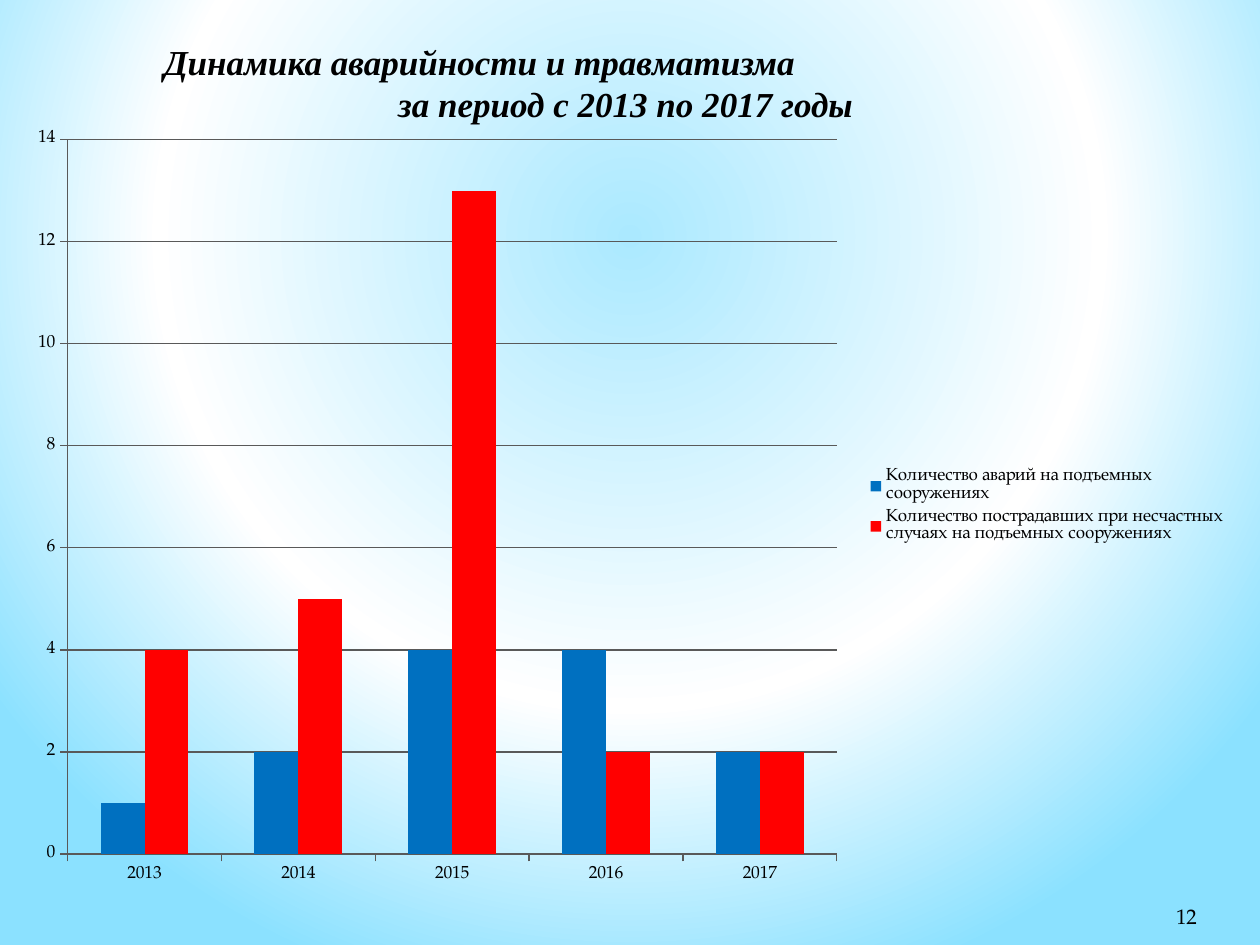
from dataclasses import dataclass

from pptx import Presentation
from pptx.chart.data import CategoryChartData
from pptx.dml.color import RGBColor
from pptx.enum.chart import XL_CHART_TYPE as ChartType
from pptx.enum.chart import XL_LEGEND_POSITION as LegendPosition
from pptx.enum.chart import XL_TICK_MARK as TickMark
from pptx.enum.text import MSO_ANCHOR as Anchor
from pptx.enum.text import MSO_AUTO_SIZE as AutoSize
from pptx.enum.text import PP_ALIGN as Align
from pptx.oxml import parse_xml
from pptx.oxml.ns import nsdecls
from pptx.util import Inches, Pt

WIDTH, HEIGHT = 10, 7.5
BODY_FONT, TITLE_FONT = "TeX Gyre Pagella", "Times New Roman"
BLACK, AXIS_GREY = "000000", "595959"
TITLE_ONLY = 5
BACKGROUND_STOPS = ((0, "ABE9FF"), (60, "FFFFFF"), (100, "8BE1FF"))
YEARS = [str(year) for year in range(2013, 2018)]


@dataclass(frozen=True)
class Frame:
    """A rectangle in shares of whatever contains it."""
    left: float
    top: float
    width: float
    height: float

    def on_page(self) -> tuple:
        return (Inches(self.left * WIDTH), Inches(self.top * HEIGHT),
                Inches(self.width * WIDTH), Inches(self.height * HEIGHT))


@dataclass(frozen=True)
class Series:
    name: str
    values: tuple
    color: str


@dataclass(frozen=True)
class TitleLine:
    text: str
    indent: float  # share of the slide's width


SERIES = (
    Series("Количество аварий на подъемных сооружениях", (1, 2, 4, 4, 2), "0070C0"),
    Series("Количество пострадавших при несчастных случаях на подъемных сооружениях",
           (4, 5, 13, 2, 2), "FF0000"),
)
TITLE_LINES = (
    TitleLine("Динамика аварийности и травматизма", 0.014),
    TitleLine("за период с 2013 по 2017 годы", 0.2),
)
CHART_FRAME = Frame(0.012, 0.123, 0.969, 0.829)
PLOT_FRAME = Frame(0.043, 0.03, 0.63, 0.912)
LEGEND_FRAME = Frame(0.695, 0.443, 0.3, 0.11)
TITLE_FRAME = Frame(0.106, 0.036, 0.78, 0.103)
NUMBER_FRAME = Frame(0.867, 0.936, 0.083, 0.053)


def rgb(color: str) -> RGBColor:
    return RGBColor.from_string(color)


def format_font(font, *, name: str, size: float, color: str = BLACK,
                bold: bool = False, italic: bool = False) -> None:
    font.name, font.size = name, Pt(size)
    font.bold, font.italic = bold, italic
    font.color.rgb = rgb(color)


def write(para, text: str, *, align, indent: float = 0, **font_format) -> None:
    para.alignment = align
    para.line_spacing = 1.0
    para.space_before = para.space_after = Pt(0)
    if indent:
        properties = para._p.get_or_add_pPr()
        properties.set("marL", str(Inches(indent * WIDTH)))
        properties.set("indent", "0")
    span = para.add_run()
    span.text = text
    format_font(span.font, **font_format)


def paint_background(page) -> None:
    stops = "".join(f'<a:gs pos="{share * 1000}"><a:srgbClr val="{color}"/></a:gs>'
                    for share, color in BACKGROUND_STOPS)
    background = parse_xml(
        f'<p:bg {nsdecls("p", "a")}><p:bgPr><a:gradFill rotWithShape="1">'
        f'<a:gsLst>{stops}</a:gsLst><a:path path="circle">'
        '<a:fillToRect l="20000" t="10000" r="20000" b="60000"/></a:path>'
        '</a:gradFill><a:effectLst/></p:bgPr></p:bg>')
    page._element.cSld.insert(0, background)


def chart_layout(frame: Frame, *, inner: bool = False):
    target = '<c:layoutTarget val="inner"/>' if inner else ""
    return parse_xml(
        f'<c:layout {nsdecls("c")}><c:manualLayout>{target}'
        '<c:xMode val="edge"/><c:yMode val="edge"/>'
        f'<c:x val="{frame.left}"/><c:y val="{frame.top}"/>'
        f'<c:w val="{frame.width}"/><c:h val="{frame.height}"/>'
        '</c:manualLayout></c:layout>')


def format_line(line) -> None:
    line.color.rgb = rgb(AXIS_GREY)
    line.width = Pt(0.75)


def add_accident_chart(page) -> None:
    data = CategoryChartData(number_format="General")
    data.categories = YEARS
    for series in SERIES:
        data.add_series(series.name, series.values)
    chart = page.shapes.add_chart(
        ChartType.COLUMN_CLUSTERED, *CHART_FRAME.on_page(), data).chart
    chart.has_title = False
    format_font(chart.font, name=BODY_FONT, size=10)

    plot = chart.plots[0]
    plot.gap_width, plot.overlap = 150, 0
    plot.vary_by_categories = False
    for column, series in zip(plot.series, SERIES):
        column.format.fill.solid()
        column.format.fill.fore_color.rgb = rgb(series.color)

    for axis in (chart.category_axis, chart.value_axis):
        axis.major_tick_mark = TickMark.OUTSIDE
        axis.minor_tick_mark = TickMark.NONE
        format_line(axis.format.line)
    scale = chart.value_axis
    scale.minimum_scale, scale.maximum_scale, scale.major_unit = 0, 14, 2
    scale.has_major_gridlines = True
    format_line(scale.major_gridlines.format.line)

    chart.has_legend = True
    legend = chart.legend
    legend.position = LegendPosition.RIGHT
    legend.include_in_layout = False
    place_in_chart(chart._chartSpace.chart.plotArea, 0,
                   chart_layout(PLOT_FRAME, inner=True))
    place_in_chart(legend._element, 1, chart_layout(LEGEND_FRAME))


def place_in_chart(part, index: int, layout) -> None:
    for old in part.xpath("c:layout"):
        part.remove(old)
    part.insert(index, layout)


def fill_title(page) -> None:
    title = page.shapes.title
    title.left, title.top, title.width, title.height = TITLE_FRAME.on_page()
    frame = title.text_frame
    frame.word_wrap = True
    frame.auto_size = AutoSize.SHAPE_TO_FIT_TEXT
    frame.vertical_anchor = Anchor.TOP
    for index, line in enumerate(TITLE_LINES):
        para = frame.add_paragraph() if index else frame.paragraphs[0]
        write(para, line.text, align=Align.LEFT, indent=line.indent,
              name=TITLE_FONT, size=20, bold=True, italic=True)


def add_page_number(page, number: int) -> None:
    frame = page.shapes.add_textbox(*NUMBER_FRAME.on_page()).text_frame
    frame.word_wrap = True
    frame.vertical_anchor = Anchor.BOTTOM
    frame.margin_left = frame.margin_right = 0
    write(frame.paragraphs[0], str(number), align=Align.RIGHT,
          name=BODY_FONT, size=12)


def main() -> None:
    deck = Presentation()
    deck.slide_width, deck.slide_height = Inches(WIDTH), Inches(HEIGHT)
    page = deck.slides.add_slide(deck.slide_layouts[TITLE_ONLY])
    paint_background(page)
    add_accident_chart(page)
    fill_title(page)
    add_page_number(page, 12)
    deck.save("out.pptx")


if __name__ == "__main__":
    main()
